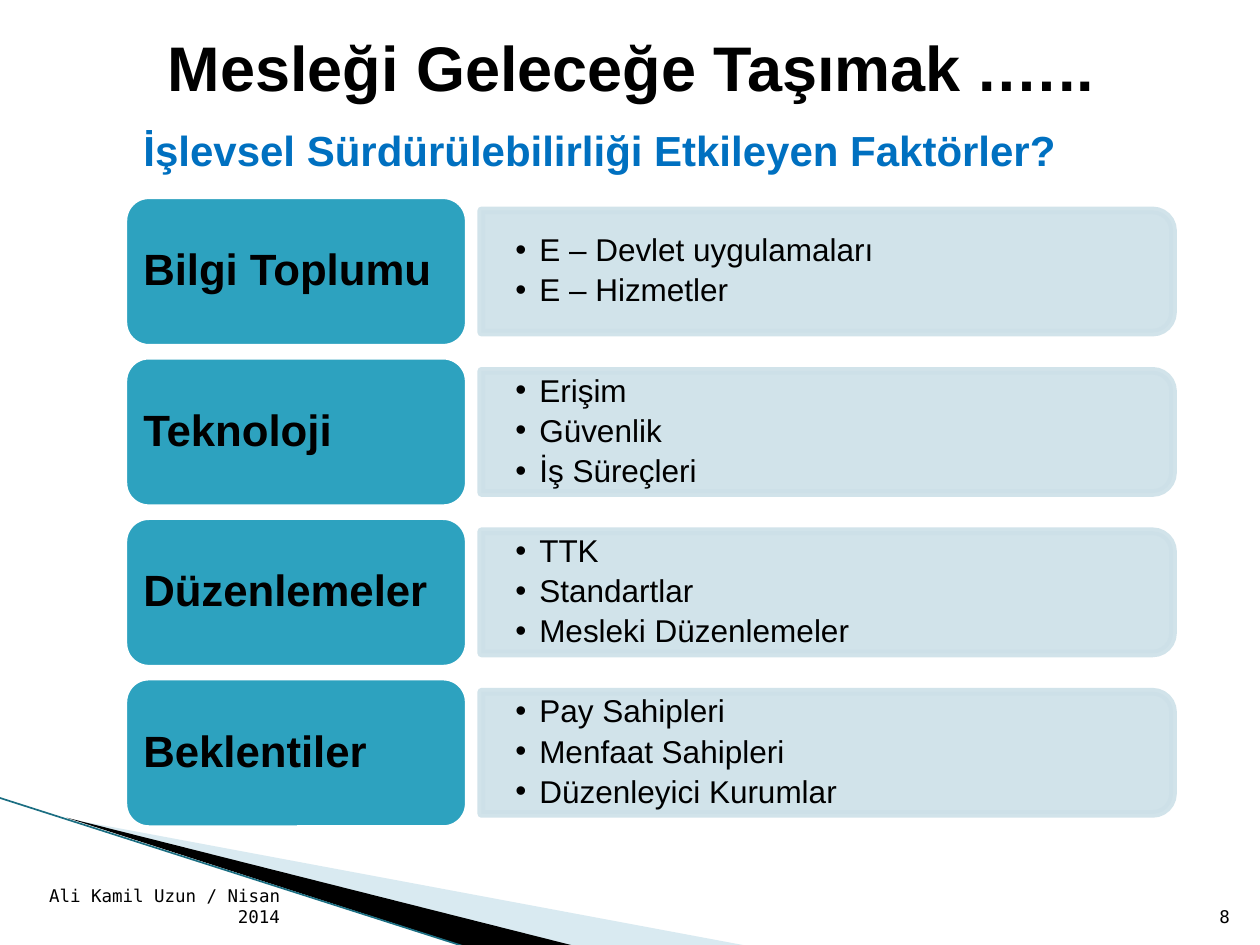
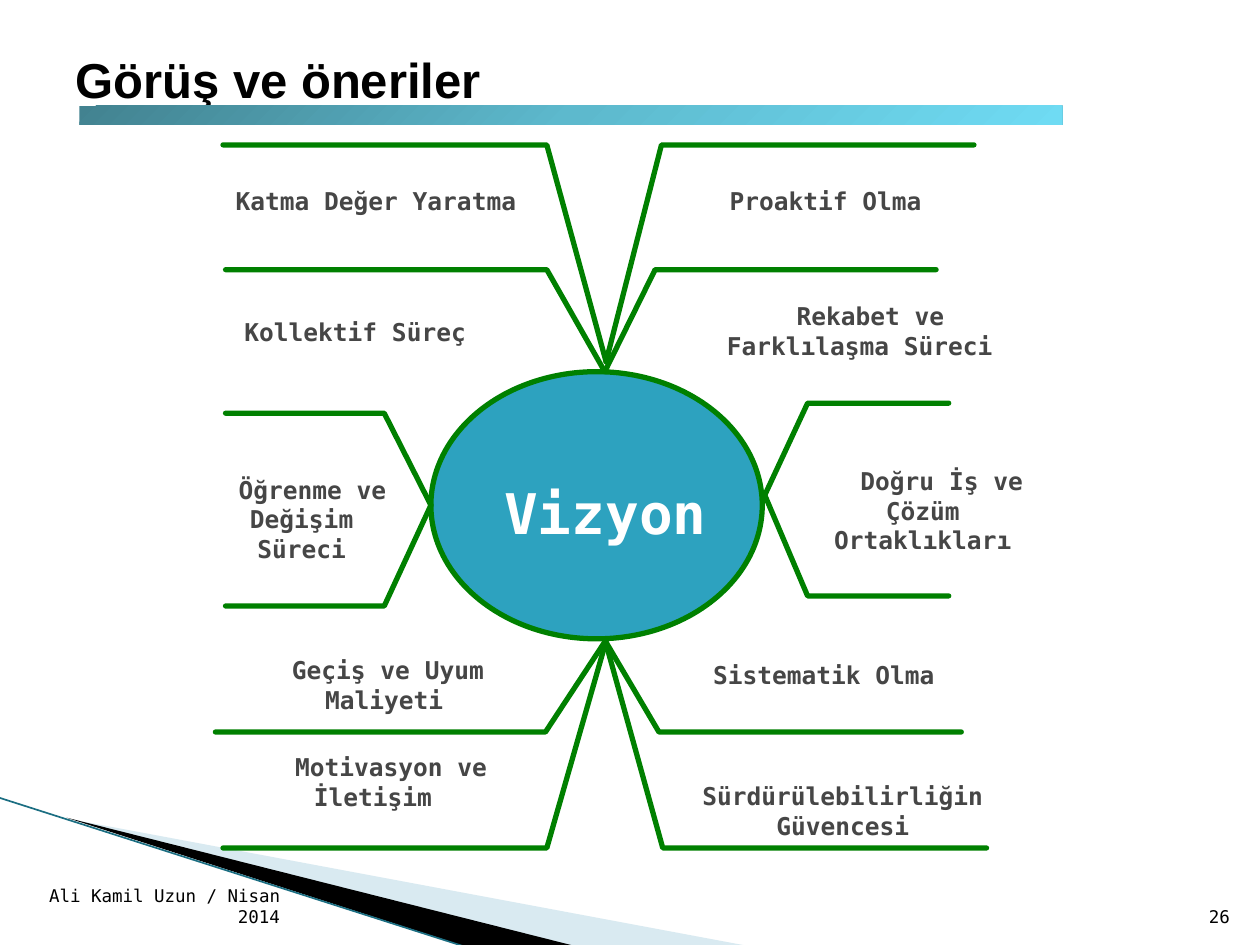
from copy import deepcopy
from typing import NamedTuple

from lxml.etree import SubElement
from pptx import Presentation
from pptx.dml.color import RGBColor
from pptx.enum.shapes import MSO_CONNECTOR, MSO_SHAPE
from pptx.enum.text import MSO_ANCHOR, MSO_AUTO_SIZE, PP_ALIGN
from pptx.oxml.ns import qn
from pptx.util import Inches, Pt

SANS = "Arial"
MONO = "DejaVu Sans Mono"
COLORS = {
    "black": "000000", "white": "FFFFFF", "heading": "0070C0", "teal": "2DA2BF",
    "band": "CDE0E8", "wedge": "A0CBDC", "edge": "1B6E82", "green": "008000",
    "gray": "464646", "bar_start": "428290", "bar_mid": "5DB9CD", "bar_end": "6FDBF3",
}
COMPARISON, TITLE_ONLY = 4, 5
Point = tuple[float, float]


class Box(NamedTuple):
    left: float
    top: float
    width: float
    height: float


class TextStyle(NamedTuple):
    size: float
    color: str = "black"
    font: str = SANS
    bold: bool = False
    align: PP_ALIGN = PP_ALIGN.LEFT


class Factor(NamedTuple):
    name: str
    items: list[str]


class Branch(NamedTuple):
    hub: Point
    elbow: Point
    end: Point


class Label(NamedTuple):
    text: str
    box: Box
    align: PP_ALIGN = PP_ALIGN.CENTER
    margin: float = 0.18
    first_line: float = 0


FOOTER = TextStyle(10, font=MONO, align=PP_ALIGN.RIGHT)
HEADING = TextStyle(24, "heading", bold=True)
FACTOR_NAME = TextStyle(25, bold=True)
FACTOR_ITEM = TextStyle(18)
VISION = TextStyle(32, "white", MONO, True, PP_ALIGN.CENTER)

FACTORS = [
    Factor("Bilgi Toplumu", ["E – Devlet uygulamaları", "E – Hizmetler"]),
    Factor("Teknoloji", ["Erişim", "Güvenlik", "İş Süreçleri"]),
    Factor("Düzenlemeler", ["TTK", "Standartlar", "Mesleki Düzenlemeler"]),
    Factor("Beklentiler", ["Pay Sahipleri", "Menfaat Sahipleri", "Düzenleyici Kurumlar"]),
]
FIRST_ROW, LAST_ROW = 1.55, 5.37
ROW_PITCH = (LAST_ROW - FIRST_ROW) / (len(FACTORS) - 1)

BRANCHES = [
    Branch((4.81, 2.87), (4.34, 1.15), (1.77, 1.15)),
    Branch((4.81, 2.87), (5.25, 1.15), (7.73, 1.15)),
    Branch((4.8, 2.95), (4.34, 2.14), (1.79, 2.14)),
    Branch((4.8, 2.95), (5.2, 2.14), (7.43, 2.14)),
    Branch((3.42, 4.01), (3.05, 3.28), (1.79, 3.28)),
    Branch((3.42, 4.01), (3.05, 4.81), (1.79, 4.81)),
    Branch((6.07, 3.93), (6.41, 3.2), (7.53, 3.2)),
    Branch((6.07, 3.93), (6.41, 4.73), (7.53, 4.73)),
    Branch((4.81, 5.08), (4.33, 5.81), (1.71, 5.81)),
    Branch((4.8, 5.08), (5.23, 5.81), (7.63, 5.81)),
    Branch((4.81, 5.09), (4.34, 6.73), (1.77, 6.73)),
    Branch((4.81, 5.11), (5.26, 6.73), (7.83, 6.73)),
]
LABELS = [
    Label("Katma Değer Yaratma", Box(1.87, 1.48, 2.7, 0.44), PP_ALIGN.LEFT, 0),
    Label("Proaktif Olma", Box(5.79, 1.48, 2.7, 0.44), PP_ALIGN.LEFT, 0),
    Label("Kollektif Süreç", Box(1.94, 2.52, 2.7, 0.44), PP_ALIGN.LEFT, 0),
    Label("Rekabet ve Farklılaşma Süreci", Box(5.37, 2.39, 2.73, 0.37), first_line=0.17),
    Label("Öğrenme ve\vDeğişim Süreci", Box(1.47, 3.77, 1.67, 0.37), first_line=0.17),
    Label("Doğru İş ve Çözüm Ortaklıkları", Box(6.16, 3.7, 2.15, 0.49), first_line=0.3),
    Label("Geçiş ve Uyum\vMaliyeti", Box(1.47, 5.2, 2.98, 0.37), first_line=0.06),
    Label("Sistematik Olma", Box(5.66, 5.24, 2.5, 0.37), PP_ALIGN.LEFT, 0),
    Label("Motivasyon ve İletişim", Box(1.38, 5.97, 2.98, 0.37), first_line=0.29),
    Label("Sürdürülebilirliğin Güvencesi", Box(5.3, 6.2, 2.6, 0.37)),
]


def rgb(name: str) -> RGBColor:
    return RGBColor.from_string(COLORS[name])


def inches(values) -> list:
    return [Inches(v) for v in values]


def set_opacity(shape, percent: int) -> None:
    for color in shape.element.spPr.iter(qn("a:srgbClr")):
        SubElement(color, qn("a:alpha"), val=str(percent * 1000))


def paint(shape, fill: str | None, line: str | None = None, width: float = 0) -> None:
    shape.shadow.inherit = False
    if fill:
        shape.fill.solid()
        shape.fill.fore_color.rgb = rgb(fill)
    else:
        shape.fill.background()
    if line:
        shape.line.color.rgb = rgb(line)
        shape.line.width = Pt(width)
    else:
        shape.line.fill.background()


def add_shape(s, kind: MSO_SHAPE, box: Box, fill: str, line: str | None = None, width: float = 0):
    shape = s.shapes.add_shape(kind, *inches(box))
    paint(shape, fill, line, width)
    return shape


def add_outline(s, points: list[Point], close: bool):
    start, *rest = [tuple(inches(point)) for point in points]
    builder = s.shapes.build_freeform(*start, scale=1.0)
    builder.add_line_segments(rest, close=close)
    return builder.convert_to_shape()


def set_frame(tf, anchor=MSO_ANCHOR.TOP, inset_x: float = 0.1, inset_y: float = 0.05) -> None:
    tf.word_wrap = True
    tf.auto_size = MSO_AUTO_SIZE.NONE
    tf.vertical_anchor = anchor
    tf.margin_left = tf.margin_right = Inches(inset_x)
    tf.margin_top = tf.margin_bottom = Inches(inset_y)


def style_paragraph(p, style: TextStyle) -> None:
    p.alignment = style.align
    p.space_before = Pt(0)
    p.font.name, p.font.size, p.font.bold = style.font, Pt(style.size), style.bold
    p.font.color.rgb = rgb(style.color)


def set_indent(p, margin: float, first_line: float) -> None:
    pPr = p._p.get_or_add_pPr()
    pPr.set("marL", str(Inches(margin)))
    pPr.set("indent", str(Inches(first_line)))


def add_text(s, text: str, box: Box, style: TextStyle, anchor=MSO_ANCHOR.TOP, inset=(0.1, 0.05)):
    tf = s.shapes.add_textbox(*inches(box)).text_frame
    set_frame(tf, anchor, *inset)
    p = tf.paragraphs[0]
    p.text = text
    style_paragraph(p, style)
    return p


def place(shape, box: Box) -> None:
    shape.left, shape.top, shape.width, shape.height = inches(box)


def set_title(s, text: str, box: Box, style: TextStyle) -> None:
    title = s.shapes.title
    place(title, box)
    title.text = text
    set_frame(title.text_frame)
    style_paragraph(title.text_frame.paragraphs[0], style)


def add_base(prs, layout: int, number: int):
    """Start a slide with the corner wedges, the footer and the slide number."""
    s = prs.slides.add_slide(prs.slide_layouts[layout])
    pale = add_outline(s, [(0.55, 6.5), (5.95, 7.51), (4.56, 7.51)], True)
    paint(pale, "wedge")
    set_opacity(pale, 40)
    dark = add_outline(s, [(0.53, 6.49), (4.57, 7.51), (3.72, 7.52)], True)
    paint(dark, "black")
    edge = s.shapes.add_connector(MSO_CONNECTOR.STRAIGHT, *inches((-0.01, 6.33, 3.71, 7.52)))
    edge.line.color.rgb = rgb("edge")
    edge.line.width = Pt(0.95)
    SubElement(edge.element.spPr, qn("a:effectLst"))
    add_text(s, "Ali Kamil Uzun / Nisan 2014", Box(0, 7.01, 2.32, 0.4), FOOTER, MSO_ANCHOR.BOTTOM)
    add_text(s, str(number), Box(9.46, 7.01, 0.4, 0.4), FOOTER, MSO_ANCHOR.BOTTOM)
    return s


def add_factor(s, factor: Factor, top: float, body) -> None:
    """Draw one row: a name block and a band that carries the body list."""
    middle = top + 0.605
    depth, length = 0.97, 5.49
    band = add_shape(s, MSO_SHAPE.ROUND_2_SAME_RECTANGLE,
                     Box(6.565 - depth / 2, middle - length / 2, depth, length),
                     "band", "band", 4.33)
    band.rotation = 90
    set_opacity(band, 90)

    s.shapes.element.append(body.element)  # bring the list in front of its band
    place(body, Box(3.82, middle - 0.44, 5.45, 0.88))
    tf = body.text_frame
    tf.text = "\n".join(factor.items)
    set_frame(tf, MSO_ANCHOR.MIDDLE, 0.27, 0.14)
    for p in tf.paragraphs:
        set_indent(p, 0.19, -0.19)
        SubElement(p._p.get_or_add_pPr(), qn("a:buChar"), char="•")
        p.line_spacing = 0.9
        p.space_after = Pt(3.5)
        style_paragraph(p, FACTOR_ITEM)

    block = add_shape(s, MSO_SHAPE.ROUNDED_RECTANGLE, Box(0.98, top, 2.74, 1.21),
                      "teal", "white", 4.33)
    set_frame(block.text_frame, MSO_ANCHOR.MIDDLE)
    p = block.text_frame.paragraphs[0]
    p.text = factor.name
    p.line_spacing = 0.9
    style_paragraph(p, FACTOR_NAME)


def add_title_bar(s) -> None:
    bar = add_shape(s, MSO_SHAPE.RECTANGLE, Box(0.63, 0.84, 7.8, 0.15), "teal")
    bar.fill.gradient()
    bar.fill.gradient_angle = 315
    first = bar.element.spPr.find(".//" + qn("a:gs"))
    first.addnext(deepcopy(first))
    names = ("bar_start", "bar_mid", "bar_end")
    for stop, name, position in zip(bar.fill.gradient_stops, names, (0, 0.5, 1)):
        stop.color.rgb = rgb(name)
        stop.position = position


def add_branch(s, branch: Branch) -> None:
    line = add_outline(s, list(branch), False)
    paint(line, None, "green", 3)
    ln = line.line._get_or_add_ln()
    ln.set("cap", "rnd")
    SubElement(ln, qn("a:round"))


def build_factors(prs) -> None:
    s = add_base(prs, COMPARISON, 8)
    set_title(s, "Mesleği Geleceğe Taşımak .…..", Box(0.51, 0.18, 9, 0.8),
              TextStyle(36, bold=True, align=PP_ALIGN.CENTER))
    add_text(s, "İşlevsel Sürdürülebilirliği Etkileyen Faktörler?",
             Box(1.04, 0.94, 8.61, 0.55), HEADING)
    bodies = [ph for ph in s.placeholders if ph.placeholder_format.idx > 0]
    for row, (factor, body) in enumerate(zip(FACTORS, bodies)):
        add_factor(s, factor, FIRST_ROW + row * ROW_PITCH, body)


def build_vision(prs) -> None:
    s = add_base(prs, TITLE_ONLY, 26)
    set_title(s, "Görüş ve öneriler", Box(0.5, 0.34, 9, 1.2), TextStyle(28, bold=True))
    add_title_bar(s)
    add_shape(s, MSO_SHAPE.OVAL, Box(3.42, 2.95, 2.63, 2.12), "teal", "green", 3)
    for branch in BRANCHES:
        add_branch(s, branch)
    for label in LABELS:
        style = TextStyle(14, "gray", MONO, True, label.align)
        p = add_text(s, label.text, label.box, style, inset=(0, 0))
        set_indent(p, label.margin, label.first_line)
    add_text(s, "Vizyon", Box(3.76, 3.8, 2.09, 0.44), VISION, inset=(0, 0))


def main() -> None:
    prs = Presentation()
    prs.slide_width, prs.slide_height = Inches(10), Inches(7.5)
    build_factors(prs)
    build_vision(prs)
    prs.save("out.pptx")


if __name__ == "__main__":
    main()
